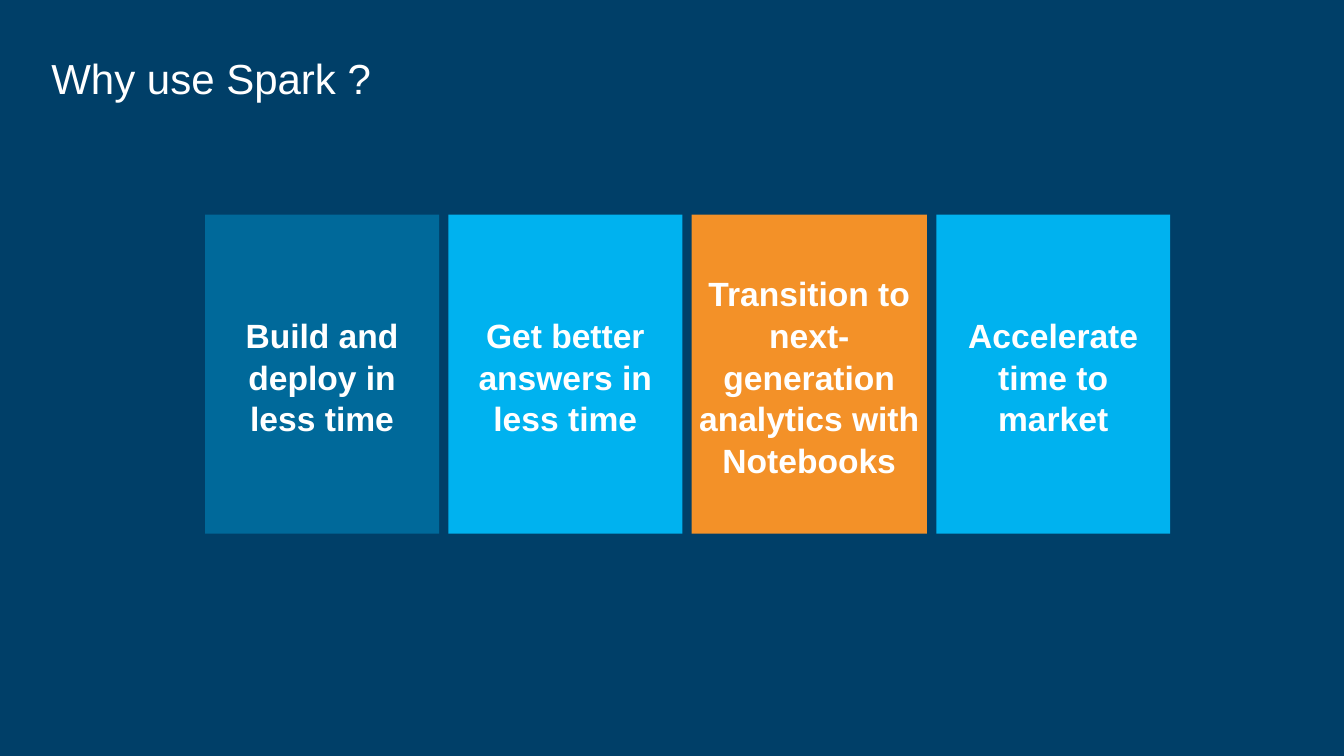
from pptx import Presentation
from pptx.dml.color import RGBColor
from pptx.enum.shapes import MSO_SHAPE
from pptx.enum.text import MSO_ANCHOR, PP_ALIGN
from pptx.util import Cm, Pt

NAVY = RGBColor(0x00, 0x3F, 0x68)
TEAL = RGBColor(0x00, 0x69, 0x9A)
SKY = RGBColor(0x00, 0xB2, 0xEF)
ORANGE = RGBColor(0xF3, 0x91, 0x28)
WHITE = RGBColor(0xFF, 0xFF, 0xFF)

LEFT, TOP, HEIGHT, GAP = 10.34, 10.82, 16.07, 0.47
CARDS = [
    ("Build and deploy in less time", TEAL, 11.79),
    ("Get better answers in less time", SKY, 11.79),
    ("Transition to next-generation analytics with Notebooks", ORANGE, 11.86),
    ("Accelerate time to market", SKY, 11.79),
]


def write(shape, text, size, align, inset, bottom, bold=False):
    frame = shape.text_frame
    frame.word_wrap = True
    frame.vertical_anchor = MSO_ANCHOR.MIDDLE
    frame.margin_left = frame.margin_right = frame.margin_top = Cm(inset)
    frame.margin_bottom = Cm(bottom)
    para = frame.paragraphs[0]
    para.text = text
    para.alignment = align
    font = para.font
    font.name = "Arial"
    font.size = Pt(size)
    font.bold = bold
    font.color.rgb = WHITE
    return para


def add_title(slide, text):
    box = slide.shapes.add_textbox(Cm(2.59), Cm(2.08), Cm(46.28), Cm(3.68))
    write(box, text, 60, PP_ALIGN.LEFT, 0, 0)


def add_card(slide, text, fill, left, width):
    card = slide.shapes.add_shape(
        MSO_SHAPE.RECTANGLE, Cm(left), Cm(TOP), Cm(width), Cm(HEIGHT)
    )
    card.shadow.inherit = False
    card.fill.solid()
    card.fill.fore_color.rgb = fill
    card.line.fill.background()
    para = write(card, text, 48, PP_ALIGN.CENTER, 0.3, 0.13, bold=True)
    para.line_spacing = 1.04


def main():
    deck = Presentation()
    deck.slide_width = Cm(67.74)
    deck.slide_height = Cm(38.1)
    slide = deck.slides.add_slide(deck.slide_layouts[6])
    slide.background.fill.solid()
    slide.background.fill.fore_color.rgb = NAVY

    add_title(slide, "Why use Spark ?")
    left = LEFT
    for text, fill, width in CARDS:
        add_card(slide, text, fill, left, width)
        left += width + GAP

    deck.save("out.pptx")


if __name__ == "__main__":
    main()
